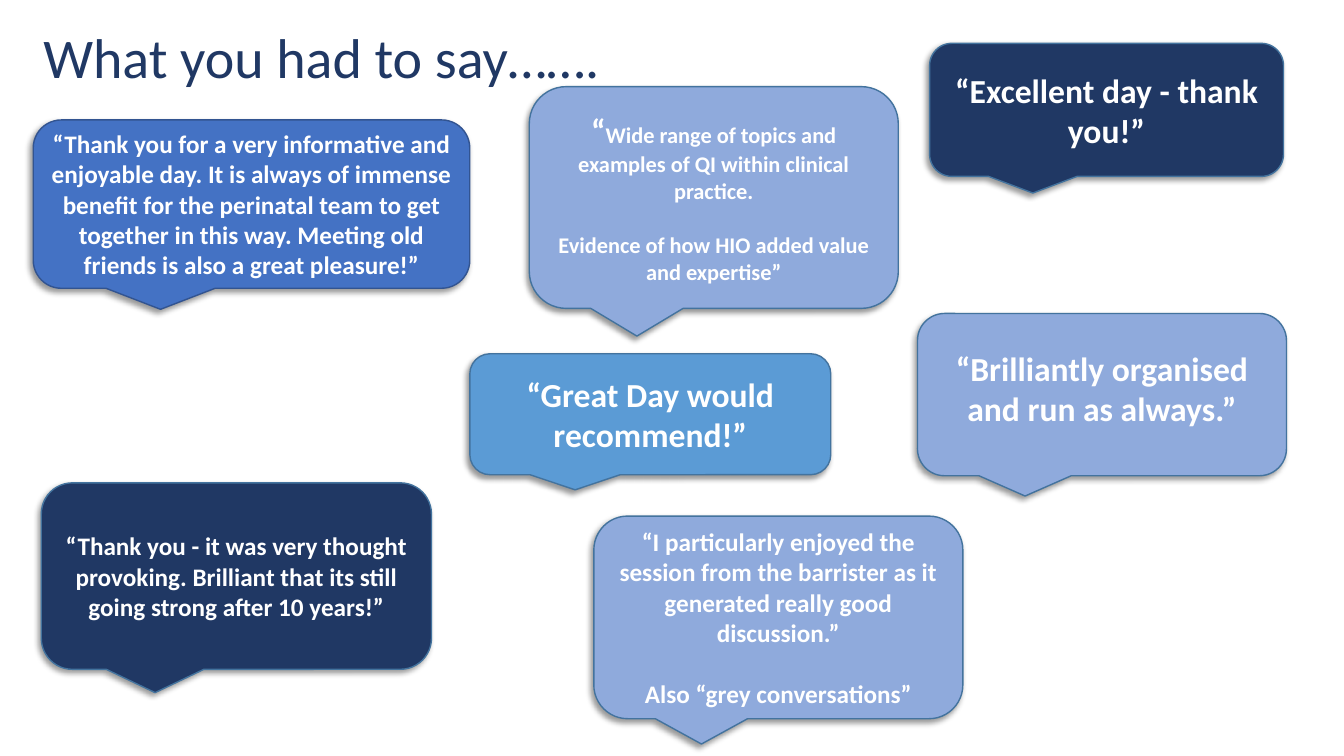
from lxml import etree
from pptx import Presentation
from pptx.dml.color import RGBColor
from pptx.enum.shapes import MSO_SHAPE
from pptx.enum.text import MSO_ANCHOR, MSO_AUTO_SIZE, PP_ALIGN
from pptx.oxml.ns import qn
from pptx.util import Inches, Pt

CALLOUT = MSO_SHAPE.ROUNDED_RECTANGULAR_CALLOUT
LEFT, CENTER = PP_ALIGN.LEFT, PP_ALIGN.CENTER
TOP, MIDDLE = MSO_ANCHOR.TOP, MSO_ANCHOR.MIDDLE
FONT = "Calibri"
COLORS = {
    "navy": "203864", "royal": "4472C4", "sky": "5B9BD5", "pale": "8FAADC",
    "edge": "43739E", "royal_edge": "325491", "white": "FFFFFF", "shadow": "000000",
}

# Content: each paragraph is a list of (text, size) runs
TITLE = "What you had to say……."
QUOTES = [
    {"box": (9.22, 0.43, 3.51, 1.32), "fill": "navy",
     "paragraphs": [[("“Excellent day - thank you!”", 24)]]},
    {"box": (5.89, 5.12, 3.66, 2.01), "fill": "pale", "gap": 22,
     "paragraphs": [
         [("“I particularly enjoyed the session from the barrister as it "
           "generated really good discussion.”", 18)],
         [("Also “grey conversations”", 18)]]},
    {"box": (4.66, 3.51, 3.58, 1.2), "fill": "sky",
     "paragraphs": [[("“Great Day would recommend!”", 24)]]},
    {"box": (0.41, 4.79, 3.87, 1.85), "fill": "navy",
     "paragraphs": [[("“Thank you - it was very thought provoking. Brilliant "
                      "that its still going strong after 10 years!”", 18)]]},
    {"box": (0.33, 1.19, 4.33, 1.67), "fill": "royal", "edge": "royal_edge",
     "paragraphs": [[("“Thank you for a very informative and enjoyable day. It is "
                      "always of immense benefit for the perinatal team to get "
                      "together in this way. Meeting old friends is also a great "
                      "pleasure!”", 18)]]},
    {"box": (9.1, 3.11, 3.66, 1.61), "fill": "pale", "bottom": 0.18,
     "paragraphs": [[("“Brilliantly organised and run as always.”", 24)]]},
    {"box": (5.25, 0.86, 3.66, 2.2), "fill": "pale", "gap": 19.5,
     "paragraphs": [
         [("“", 24), ("Wide range of topics and examples of QI within clinical "
                      "practice.", 16)],
         [("Evidence of how HIO added value and expertise”", 16)]]},
]


def color(name):
    return RGBColor.from_string(COLORS[name])


def write_text(shape, paragraphs, ink="white", bold=True, align=CENTER,
               anchor=MIDDLE, gap=0, bottom=0.05):
    frame = shape.text_frame
    frame.word_wrap = True
    frame.auto_size = MSO_AUTO_SIZE.NONE
    frame.vertical_anchor = anchor
    frame.margin_bottom = Inches(bottom)
    for index, runs in enumerate(paragraphs):
        paragraph = frame.add_paragraph() if index else frame.paragraphs[0]
        paragraph.alignment = align
        paragraph.space_before = Pt(gap if index else 0)
        for text, size in runs:
            run = paragraph.add_run()
            run.text = text
            run.font.name = FONT
            run.font.size = Pt(size)
            run.font.bold = bold
            run.font.color.rgb = color(ink)


def add_shadow(shape):
    shape.shadow.inherit = False
    effects = shape._element.spPr.find(qn("a:effectLst"))
    shadow = etree.SubElement(effects, qn("a:outerShdw"), blurRad=str(Pt(4)),
                              dist=str(Pt(3)), dir=str(135 * 60000),
                              algn="tr", rotWithShape="0")
    tint = etree.SubElement(shadow, qn("a:srgbClr"), val=COLORS["shadow"])
    etree.SubElement(tint, qn("a:alpha"), val="40000")


def add_quote(slide, box, fill, paragraphs, edge="edge", **text_format):
    shape = slide.shapes.add_shape(CALLOUT, *map(Inches, box))
    shape.fill.solid()
    shape.fill.fore_color.rgb = color(fill)
    shape.line.color.rgb = color(edge)
    shape.line.width = Pt(1)
    add_shadow(shape)
    write_text(shape, paragraphs, **text_format)


def main():
    presentation = Presentation()
    presentation.slide_width = Inches(13.33)
    presentation.slide_height = Inches(7.5)
    slide = presentation.slides.add_slide(presentation.slide_layouts[5])

    # Title
    title = slide.shapes.title
    title.left, title.top, title.width, title.height = map(
        Inches, (0.33, 0.17, 7.39, 0.77))
    write_text(title, [[(TITLE, 40)]], ink="navy", bold=False, align=LEFT, anchor=TOP)

    # Speech bubbles
    for quote in QUOTES:
        add_quote(slide, **quote)

    presentation.save("out.pptx")


if __name__ == "__main__":
    main()
